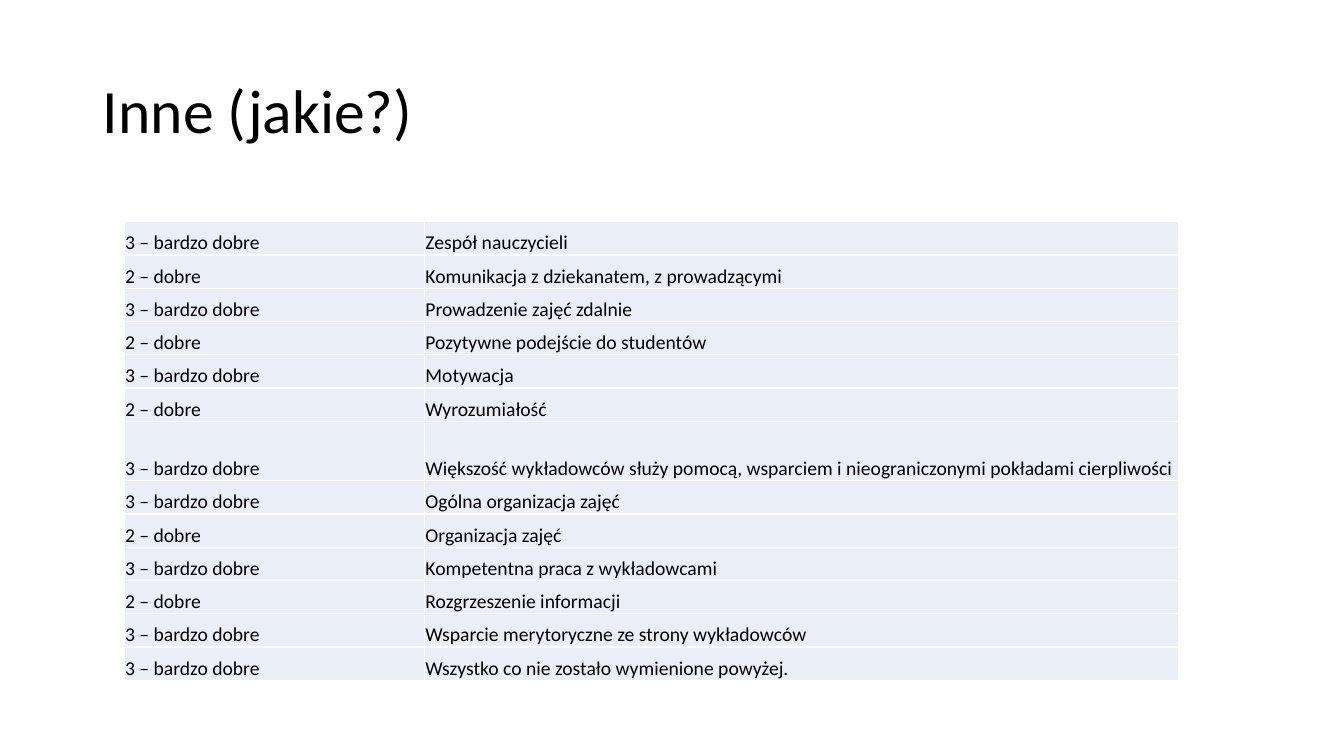
import pptx
import pptx.dml.color
import pptx.enum.text
import pptx.util

HEADING = "Inne (jakie?)"
VERY_GOOD = "3 – bardzo dobre"
GOOD = "2 – dobre"
RATINGS = [
    (VERY_GOOD, "Zespół nauczycieli"),
    (GOOD, "Komunikacja z dziekanatem, z prowadzącymi"),
    (VERY_GOOD, "Prowadzenie zajęć zdalnie"),
    (GOOD, "Pozytywne podejście do studentów"),
    (VERY_GOOD, "Motywacja"),
    (GOOD, "Wyrozumiałość"),
    (VERY_GOOD, "Większość wykładowców służy pomocą, wsparciem i nieograniczonymi pokładami cierpliwości"),
    (VERY_GOOD, "Ogólna organizacja zajęć"),
    (GOOD, "Organizacja zajęć"),
    (VERY_GOOD, "Kompetentna praca z wykładowcami"),
    (GOOD, "Rozgrzeszenie informacji"),
    (VERY_GOOD, "Wsparcie merytoryczne ze strony wykładowców"),
    (VERY_GOOD, "Wszystko co nie zostało wymienione powyżej."),
]
COLUMN_WIDTHS = (2.98, 7.48)
ROW_HEIGHT = 0.33
TALL_ROW_HEIGHT = 0.59
LONG_ANSWER = 60

BLACK = pptx.dml.color.RGBColor(0x00, 0x00, 0x00)
PALE_BLUE = pptx.dml.color.RGBColor(0xEA, 0xEF, 0xF7)
INCH = pptx.util.Inches


def write(frame, words, size):
    frame.text = words
    font = frame.paragraphs[0].runs[0].font
    font.name = "Calibri"
    font.size = pptx.util.Pt(size)
    font.color.rgb = BLACK


def main():
    deck = pptx.Presentation()
    deck.slide_width, deck.slide_height = INCH(13.33), INCH(7.5)
    slide = deck.slides.add_slide(deck.slide_layouts[5])

    heading = slide.shapes.title
    heading.left, heading.top = INCH(0.92), INCH(0.4)
    heading.width, heading.height = INCH(11.5), INCH(1.45)
    write(heading.text_frame, HEADING, 44)
    heading.text_frame.vertical_anchor = pptx.enum.text.MSO_ANCHOR.MIDDLE
    heading.text_frame.paragraphs[0].alignment = pptx.enum.text.PP_ALIGN.LEFT
    heading.text_frame.paragraphs[0].line_spacing = 0.9

    heights = [TALL_ROW_HEIGHT if len(answer) > LONG_ANSWER else ROW_HEIGHT
               for _, answer in RATINGS]
    ratings = slide.shapes.add_table(
        len(RATINGS), len(COLUMN_WIDTHS), INCH(1.23), INCH(2.2),
        INCH(sum(COLUMN_WIDTHS)), INCH(sum(heights))).table
    ratings.first_row = False
    ratings.horz_banding = False
    for column, width in zip(ratings.columns, COLUMN_WIDTHS):
        column.width = INCH(width)
    for row, height, entry in zip(ratings.rows, heights, RATINGS):
        row.height = INCH(height)
        for cell, words in zip(row.cells, entry):
            cell.fill.solid()
            cell.fill.fore_color.rgb = PALE_BLUE
            cell.vertical_anchor = pptx.enum.text.MSO_ANCHOR.BOTTOM
            cell.margin_left = cell.margin_right = cell.margin_top = INCH(0.01)
            cell.margin_bottom = 0
            write(cell.text_frame, words, 14)

    deck.save("out.pptx")


if __name__ == "__main__":
    main()
